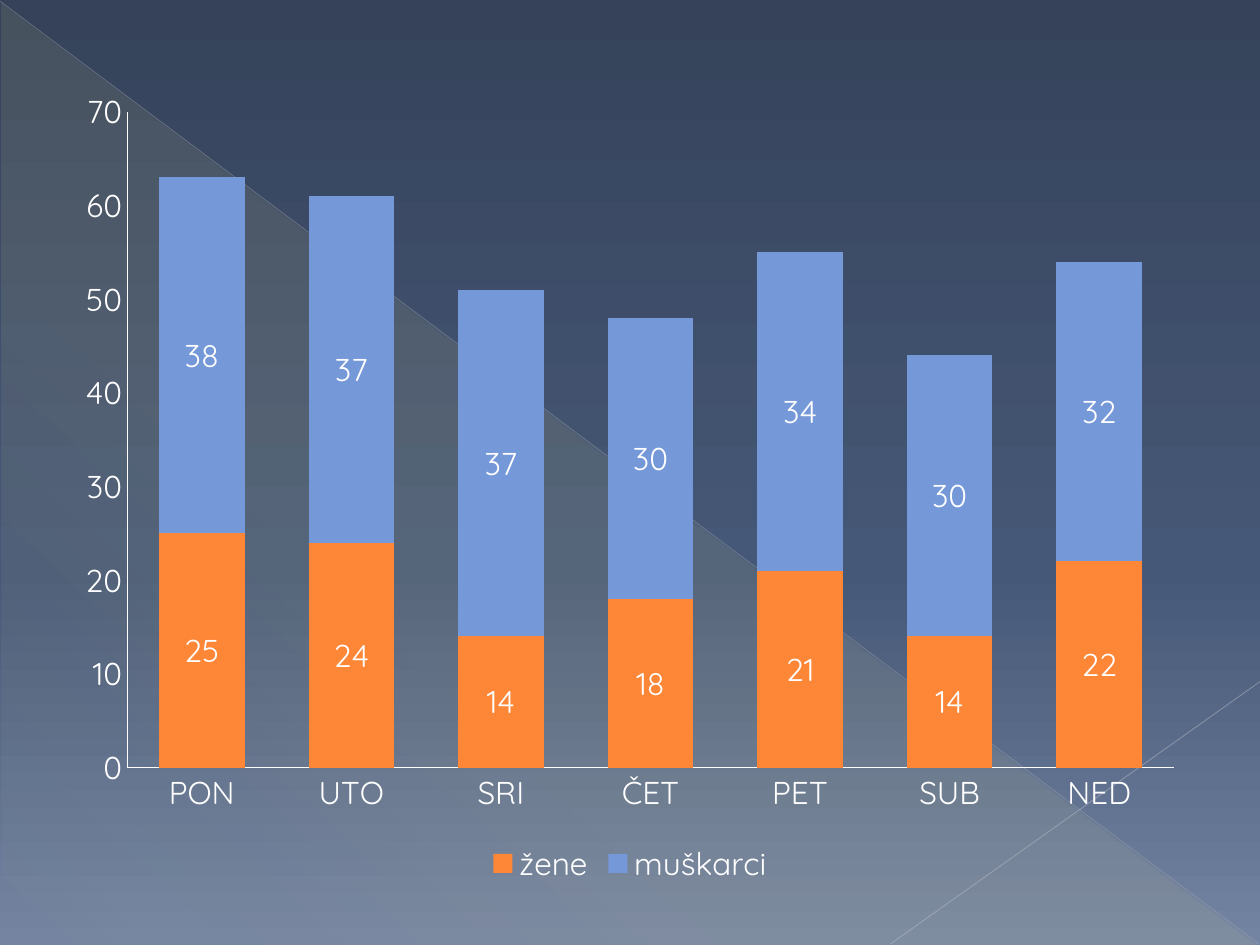
from dataclasses import dataclass

from lxml.etree import SubElement
from pptx import Presentation
from pptx.chart.data import CategoryChartData
from pptx.dml.color import RGBColor
from pptx.enum.chart import XL_CHART_TYPE, XL_LABEL_POSITION, XL_LEGEND_POSITION, XL_TICK_MARK
from pptx.enum.shapes import MSO_CONNECTOR, MSO_SHAPE
from pptx.oxml.ns import qn
from pptx.util import Pt


@dataclass(frozen=True)
class Theme:
    font: str = "Quicksand"
    text_size: float = 18
    axis_width: float = 0.5
    text: str = "FFFFFF"
    women: str = "FE8637"
    men: str = "7598D9"
    diagonal: str = "BABDC4"
    corner: str = "C1C4CA"
    sky: tuple = ((0, "35425A", 100), (60, "465877", 100), (100, "7383A2", 100))
    glow: tuple = ((0, "FFF39D", 10), (70, "FFF39D", 8), (100, "FFF39D", 1))


class SlideBuilder:
    def __init__(self, slide, theme):
        self.slide = slide
        self.theme = theme

    def set_alpha(self, color, opacity):
        if opacity < 100:
            SubElement(color, qn("a:alpha"), val=str(opacity * 1000))

    def gradient(self, fill, parent, stops, angle):
        fill.gradient()
        gradient = next(parent.iter(qn("a:gradFill")))
        for child in list(gradient):
            gradient.remove(child)
        stop_list = SubElement(gradient, qn("a:gsLst"))
        for position, color, opacity in stops:
            stop = SubElement(stop_list, qn("a:gs"), pos=str(position * 1000))
            self.set_alpha(SubElement(stop, qn("a:srgbClr"), val=color), opacity)
        SubElement(gradient, qn("a:lin"), ang=str(angle * 60000), scaled="0")

    def background(self, stops, angle):
        self.gradient(self.slide.background.fill, self.slide.element, stops, angle)

    def triangle(self, left, top, width, height, stops, angle):
        triangle = self.slide.shapes.add_shape(
            MSO_SHAPE.RIGHT_TRIANGLE, Pt(left), Pt(top), Pt(width), Pt(height))
        triangle.shadow.inherit = False
        triangle.line.fill.background()
        self.gradient(triangle.fill, triangle.element, stops, angle)

    def line(self, start, end, color, width, opacity):
        line = self.slide.shapes.add_connector(
            MSO_CONNECTOR.STRAIGHT, *map(Pt, start), *map(Pt, end))
        line.line.width = Pt(width)
        line.line.color.rgb = RGBColor.from_string(color)
        self.set_alpha(next(line.element.iter(qn("a:srgbClr"))), opacity)
        SubElement(line.element.spPr, qn("a:effectLst"))

    def style_font(self, font):
        font.name = self.theme.font
        font.size = Pt(self.theme.text_size)
        font.bold = False
        font.color.rgb = RGBColor.from_string(self.theme.text)

    def place_plot(self, chart, **fractions):
        plot_area = next(chart.element.iter(qn("c:plotArea")))
        for old in plot_area.findall(qn("c:layout")):
            plot_area.remove(old)
        layout = SubElement(plot_area, qn("c:layout"))
        plot_area.insert(0, layout)
        manual = SubElement(layout, qn("c:manualLayout"))
        settings = {"layoutTarget": "inner", "xMode": "edge", "yMode": "edge", **fractions}
        for tag, value in settings.items():
            SubElement(manual, qn(f"c:{tag}"), val=str(value))

    def stacked_chart(self, left, top, width, height, days, series):
        data = CategoryChartData()
        data.categories = days
        for name, values, _ in series:
            data.add_series(name, values)
        chart = self.slide.shapes.add_chart(
            XL_CHART_TYPE.COLUMN_STACKED, Pt(left), Pt(top), Pt(width), Pt(height), data).chart
        chart.has_title = False
        self.style_font(chart.font)
        chart.has_legend = True
        chart.legend.position = XL_LEGEND_POSITION.BOTTOM
        chart.legend.include_in_layout = False
        self.style_font(chart.legend.font)
        for axis in (chart.category_axis, chart.value_axis):
            axis.has_major_gridlines = False
            axis.major_tick_mark = axis.minor_tick_mark = XL_TICK_MARK.NONE
            axis.format.line.color.rgb = RGBColor.from_string(self.theme.text)
            axis.format.line.width = Pt(self.theme.axis_width)
            self.style_font(axis.tick_labels.font)
        chart.value_axis.minimum_scale = 0
        chart.value_axis.maximum_scale = 70
        chart.value_axis.major_unit = 10
        plot = chart.plots[0]
        plot.gap_width, plot.overlap, plot.vary_by_categories = 75, 100, False
        for bars, (_, _, color) in zip(plot.series, series):
            bars.format.fill.solid()
            bars.format.fill.fore_color.rgb = RGBColor.from_string(color)
            bars.data_labels.show_value = True
            bars.data_labels.position = XL_LABEL_POSITION.CENTER
            self.style_font(bars.data_labels.font)
        self.place_plot(chart, x=36.6 / width, y=20.8 / height,
                        w=598.3 / width, h=374.7 / height)


def main():
    """Build the slide with a stacked column chart of žene and muškarci from PON to NED."""
    theme = Theme()
    deck = Presentation()
    deck.slide_width, deck.slide_height = Pt(720), Pt(540)
    builder = SlideBuilder(deck.slides.add_slide(deck.slide_layouts[6]), theme)
    builder.background(theme.sky, 90)
    builder.triangle(0.7, 1.4, 718.6, 538.6, theme.glow, 133)
    builder.line((0, 0.7), (719.3, 539.3), theme.diagonal, 0.39, 35)
    builder.line((720, 389.5), (509, 539.3), theme.corner, 0.47, 45)
    builder.stacked_chart(
        36, 43.2, 648, 465.1,
        ("PON", "UTO", "SRI", "ČET", "PET", "SUB", "NED"),
        (("žene", (25, 24, 14, 18, 21, 14, 22), theme.women),
         ("muškarci", (38, 37, 37, 30, 34, 30, 32), theme.men)))
    deck.save("out.pptx")


if __name__ == "__main__":
    main()
